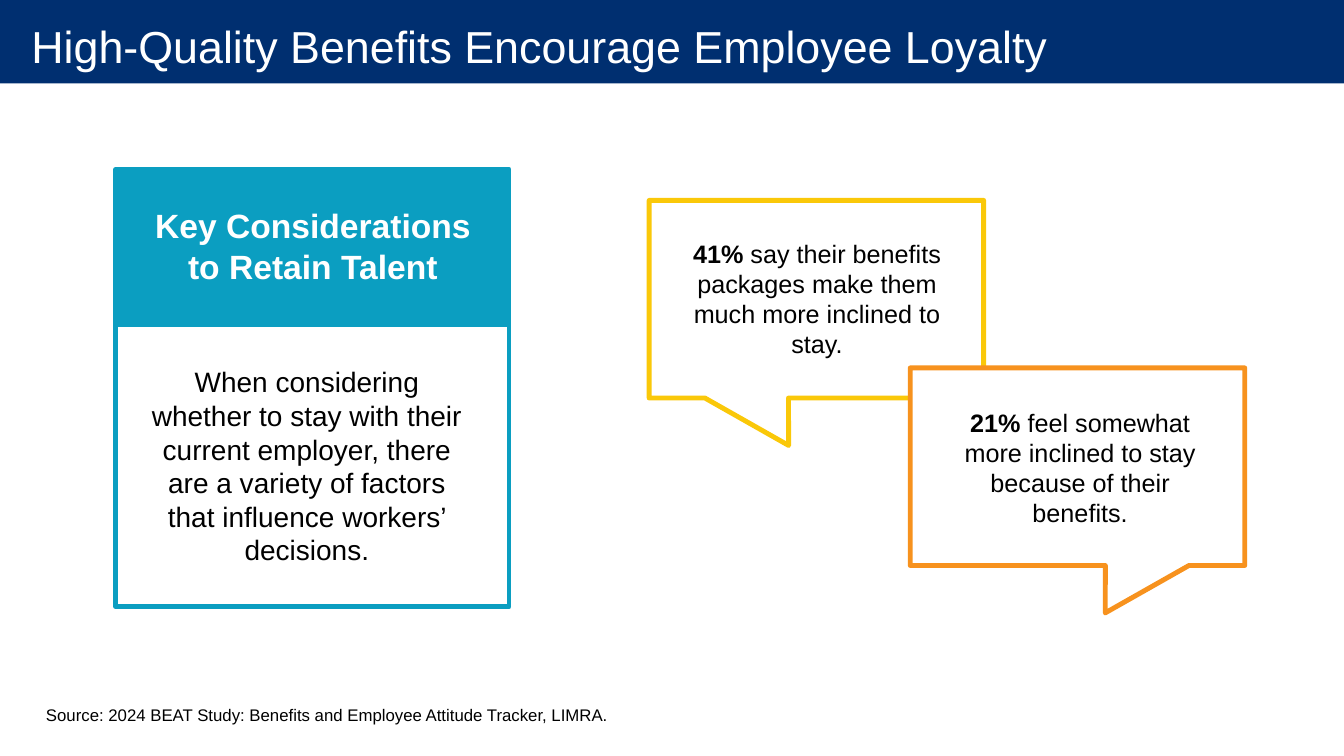
"""Build the slide on employee benefits and loyalty."""
import pptx
import pptx.dml.color
import pptx.enum.shapes
import pptx.enum.text
import pptx.util

Cm = pptx.util.Cm
SHAPES = pptx.enum.shapes.MSO_SHAPE
ALIGN = pptx.enum.text.PP_ALIGN
NAVY, TEAL, YELLOW, ORANGE = "002F70", "0B9EC1", "FAC809", "F7921E"
WHITE, BLACK = "FFFFFF", "000000"


def add_panel(page, kind, place, fill=None, line=None):
    """Add a shape with a flat fill and an optional thick outline."""
    panel = page.shapes.add_shape(kind, *[Cm(length) for length in place])
    panel.shadow.inherit = False
    for part, color in ((panel.fill, fill), (panel.line.fill, line)):
        if color:
            part.solid()
            part.fore_color.rgb = pptx.dml.color.RGBColor.from_string(color)
        else:
            part.background()
    if line:
        panel.line.width = pptx.util.Pt(3.5)
    return panel


def write_text(box, spans, size, color, align):
    """Fill a text box with one paragraph of (text, bold) spans."""
    box.text_frame.word_wrap = True
    para = box.text_frame.paragraphs[0]
    para.alignment = align
    for text, bold in spans:
        span = para.add_run()
        span.text = text
        span.font.color.rgb = pptx.dml.color.RGBColor.from_string(color)
        font_format = {"name": "Arial", "size": pptx.util.Pt(size), "bold": bold}
        for name, value in font_format.items():
            setattr(span.font, name, value)


deck = pptx.Presentation()
deck.slide_width, deck.slide_height = Cm(33.87), Cm(19.05)
page = deck.slides.add_slide(deck.slide_layouts[5])

banner = add_panel(page, SHAPES.RECTANGLE, (0, -0.08, 33.87, 2.18), NAVY)
title = page.shapes.title
title._element.addprevious(banner._element)
title_place = {"left": 0.03, "top": -0.08, "width": 33.84, "height": 2.46}
for name, length in title_place.items():
    setattr(title, name, Cm(length))
frame_format = {
    "margin_left": Cm(0.76), "margin_right": Cm(0.51),
    "margin_top": 0, "margin_bottom": 0,
    "vertical_anchor": pptx.enum.text.MSO_ANCHOR.MIDDLE,
    "auto_size": pptx.enum.text.MSO_AUTO_SIZE.NONE,
}
for name, value in frame_format.items():
    setattr(title.text_frame, name, value)
write_text(title, [("High-Quality Benefits Encourage Employee Loyalty", False)],
           32, WHITE, ALIGN.LEFT)

callouts = [
    (16.36, 5.05, YELLOW, -0.083, (16.92, 5.87, 7.34, 3.33), "41% ",
     "say their benefits packages make them much more inclined to stay."),
    (22.94, 9.27, ORANGE, 0.083, (23.5, 10.13, 7.44, 3.33), "21% ",
     "feel somewhat more inclined to stay because of their benefits."),
]
for left, top, color, tail, text_place, share, statement in callouts:
    callout = add_panel(page, SHAPES.RECTANGULAR_CALLOUT,
                        (left, top, 8.43, 4.98), WHITE, color)
    callout.adjustments[0], callout.adjustments[1] = tail, 0.74
    box = page.shapes.add_textbox(*[Cm(length) for length in text_place])
    write_text(box, [(share, True), (statement, False)], 18, BLACK, ALIGN.CENTER)

add_panel(page, SHAPES.RECTANGLE, (2.92, 4.27, 9.91, 11.02), None, TEAL)
add_panel(page, SHAPES.RECTANGLE, (2.92, 4.34, 9.91, 3.84), TEAL, TEAL)

texts = [
    ((3.48, 5.05, 8.81, 2.31), "Key Considerations to Retain Talent",
     True, 24, WHITE, ALIGN.CENTER),
    ((3.33, 9.07, 8.81, 5.38),
     "When considering whether to stay with their current employer, there are "
     "a variety of factors that influence workers’ decisions.",
     False, 20, BLACK, ALIGN.CENTER),
    ((0.91, 17.63, 15.2, 0.76),
     "Source: 2024 BEAT Study: Benefits and Employee Attitude Tracker, LIMRA.",
     False, 12, BLACK, ALIGN.LEFT),
]
for place, text, bold, size, color, align in texts:
    box = page.shapes.add_textbox(*[Cm(length) for length in place])
    write_text(box, [(text, bold)], size, color, align)

deck.save("out.pptx")
